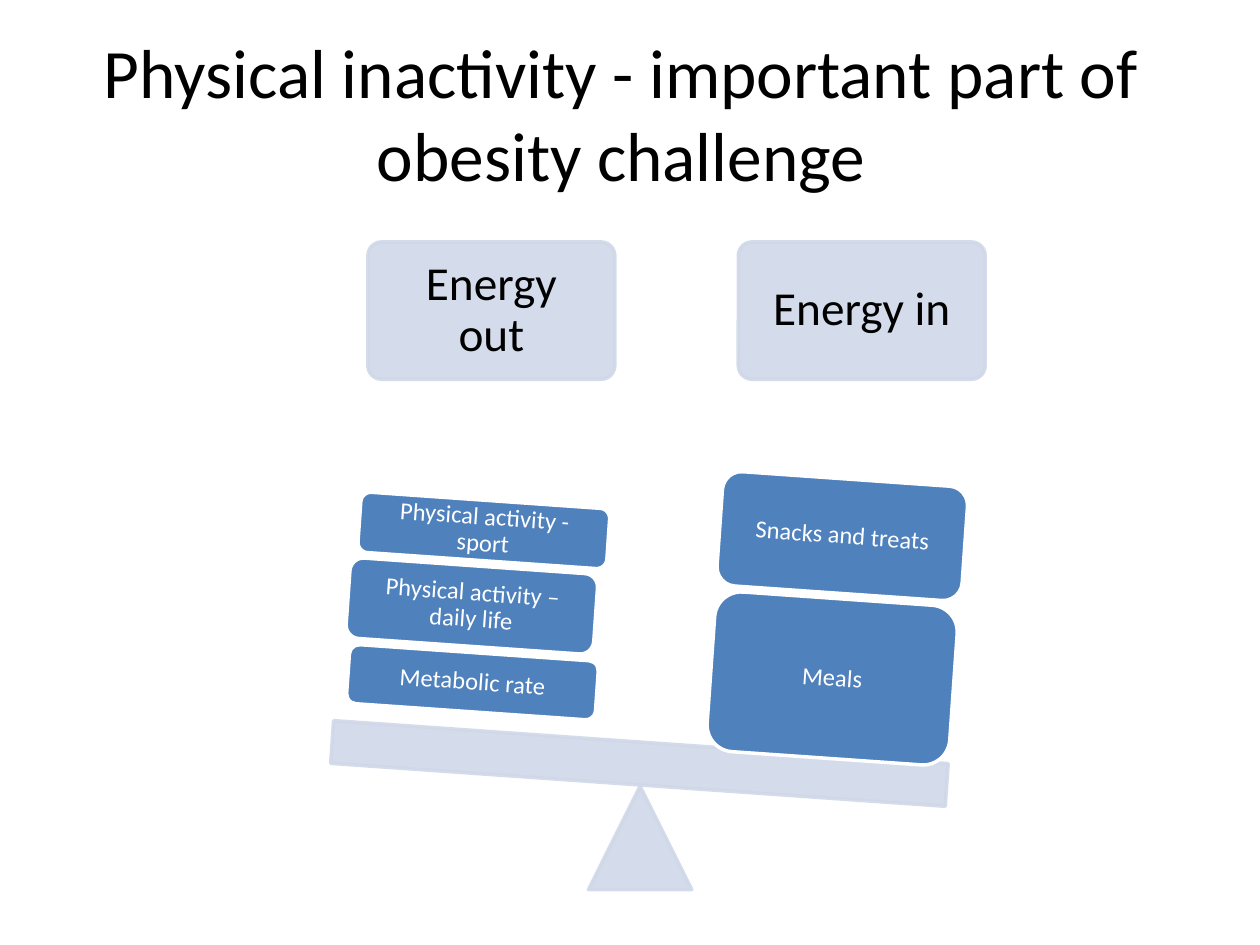
from pptx import Presentation
from pptx.dml.color import RGBColor
from pptx.enum.shapes import MSO_SHAPE
from pptx.enum.text import MSO_ANCHOR, MSO_AUTO_SIZE, PP_ALIGN
from pptx.oxml.ns import qn
from pptx.util import Inches, Pt
from lxml.etree import SubElement

COLORS = {"pale": "D0D8E8", "block": "4F81BD", "white": "FFFFFF", "black": "000000"}
FONT = "Calibri"
COLUMNS, ROWS = 100, 75
CELL = Inches(10) // COLUMNS
TILT = 4

# Pans of the scale: label, left column
PANS = [("Energy out", 29.2), ("Energy in", 58.6)]
# Blocks lying on the beam: label, left, top, width, height
BLOCKS = [
    ("Metabolic rate", 27.6, 51.8, 19.8, 4.7),
    ("Physical activity – daily life", 27.6, 44.9, 19.7, 6.4),
    ("Physical activity - sport", 28.5, 39.7, 19.8, 4.8),
    ("Meals", 56.4, 47.5, 19.3, 12.7),
    ("Snacks and treats", 57.1, 38, 19.5, 9.1),
]


def grid(*cells):
    return [round(cell * CELL) for cell in cells]


def color(name):
    return RGBColor.from_string(COLORS[name])


def set_opacity(fill, percent):
    rgb = fill._xPr.find(f"{qn('a:solidFill')}/{qn('a:srgbClr')}")
    SubElement(rgb, qn("a:alpha"), val=str(percent * 1000))


def format_text(frame, text, size, color_name, inset):
    frame.word_wrap = True
    frame.auto_size = MSO_AUTO_SIZE.NONE
    frame.vertical_anchor = MSO_ANCHOR.MIDDLE
    frame.margin_left = frame.margin_right = Inches(inset)
    frame.margin_top = frame.margin_bottom = Inches(inset)
    frame.text = text
    para = frame.paragraphs[0]
    para.alignment = PP_ALIGN.CENTER
    para.font.name = FONT
    para.font.size = Pt(size)
    para.font.color.rgb = color(color_name)
    return para


def add_shape(page, kind, place, fill, line, opacity=100, rotation=0):
    shape = page.shapes.add_shape(kind, *grid(*place))
    shape.shadow.inherit = False
    shape.rotation = rotation
    shape.fill.solid()
    shape.fill.fore_color.rgb = color(fill)
    shape.line.color.rgb = color(line)
    shape.line.width = Pt(2)
    if opacity < 100:
        set_opacity(shape.fill, opacity)
        set_opacity(shape.line.fill, opacity)
    return shape


def add_scale_part(page, kind, place, rotation=0):
    return add_shape(page, kind, place, "pale", "pale", 90, rotation)


def add_title(page, text):
    title = page.shapes.title
    title.left, title.top, title.width, title.height = grid(4.3, 6, 90, 12.5)
    format_text(title.text_frame, text, 39.6, "black", 0.05)
    # Lift the two lines above the middle of the box
    title.text_frame.margin_bottom = Inches(0.72)


def add_pan(page, text, left):
    pan = add_scale_part(page, MSO_SHAPE.ROUNDED_RECTANGLE, (left, 19.2, 19.6, 10.9))
    pan.adjustments[0] = 0.1
    format_text(pan.text_frame, text, 27, "black", 0.13).line_spacing = 0.9


def add_block(page, text, *place):
    block = add_shape(page, MSO_SHAPE.ROUNDED_RECTANGLE, place, "block", "white",
                      rotation=TILT)
    format_text(block.text_frame, text, 14, "white", 0.07).line_spacing = 0.9


def main():
    deck = Presentation()
    deck.slide_width, deck.slide_height = COLUMNS * CELL, ROWS * CELL
    page = deck.slides.add_slide(deck.slide_layouts[5])
    add_title(page, "Physical inactivity - important part of obesity challenge")

    for pan in PANS:
        add_pan(page, *pan)

    # Pivot and tilted beam
    add_scale_part(page, MSO_SHAPE.ISOSCELES_TRIANGLE, (46.7, 62.4, 8.2, 8.2))
    add_scale_part(page, MSO_SHAPE.RECTANGLE, (26.3, 58.9, 48.9, 3.4), TILT)

    for block in BLOCKS:
        add_block(page, *block)

    deck.save("out.pptx")


if __name__ == "__main__":
    main()
